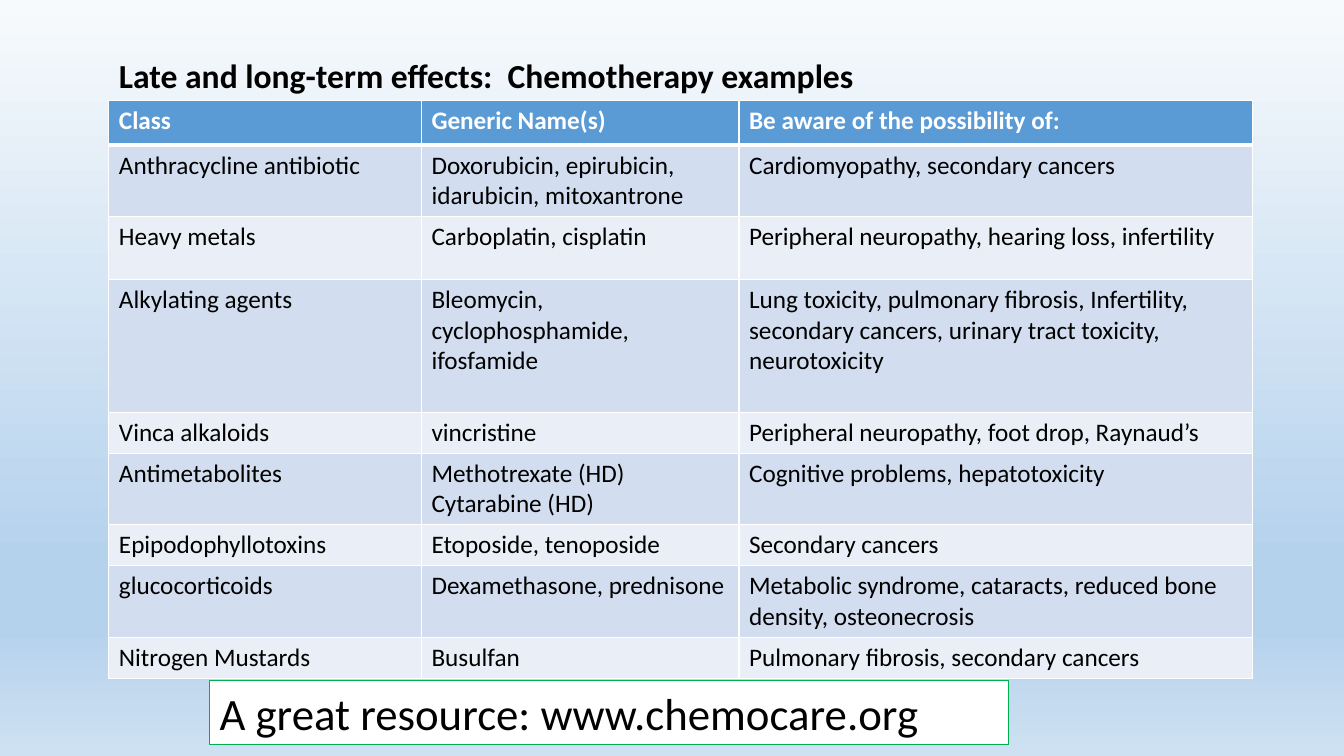
from lxml.etree import SubElement
from pptx import Presentation
from pptx.dml.color import RGBColor
from pptx.enum.shapes import MSO_SHAPE
from pptx.enum.text import MSO_ANCHOR, PP_ALIGN
from pptx.oxml.ns import qn
from pptx.util import Inches, Pt

COLORS = {
    "text": "000000",
    "white": "FFFFFF",
    "header": "5B9BD5",
    "odd_row": "D2DEEF",
    "even_row": "EAEFF7",
    "resource_line": "00B050",
}
# Background stops: percent down the slide, colour
SKY_STOPS = [(0, "F7FAFD"), (74, "B5D2EC"), (83, "B5D2EC"), (100, "CEE1F2")]

COLUMN_WIDTHS = [3.1, 3.15, 5.09]
ROW_HEIGHTS = [0.44, 0.62, 0.62, 1.32, 0.36, 0.62, 0.36, 0.62, 0.36]
DRUG_EFFECTS = [
    ("Class", "Generic Name(s)", "Be aware of the possibility of:"),
    ("Anthracycline antibiotic", "Doxorubicin, epirubicin, idarubicin, mitoxantrone",
     "Cardiomyopathy, secondary cancers"),
    ("Heavy metals", "Carboplatin, cisplatin",
     "Peripheral neuropathy, hearing loss, infertility"),
    ("Alkylating agents", "Bleomycin, cyclophosphamide, ifosfamide",
     "Lung toxicity, pulmonary fibrosis, Infertility, secondary cancers, "
     "urinary tract toxicity, neurotoxicity"),
    ("Vinca alkaloids", "vincristine", "Peripheral neuropathy, foot drop, Raynaud’s"),
    ("Antimetabolites", "Methotrexate (HD)\nCytarabine (HD)",
     "Cognitive problems, hepatotoxicity"),
    ("Epipodophyllotoxins", "Etoposide, tenoposide", "Secondary cancers"),
    ("glucocorticoids", "Dexamethasone, prednisone",
     "Metabolic syndrome, cataracts, reduced bone density, osteonecrosis"),
    ("Nitrogen Mustards", "Busulfan", "Pulmonary fibrosis, secondary cancers"),
]


def color(name):
    return RGBColor.from_string(COLORS[name])


def write(frame, text, size, color_name="text", bold=False):
    frame.text = text
    for paragraph in frame.paragraphs:
        paragraph.alignment = PP_ALIGN.LEFT
        font = paragraph.font
        font.name, font.size, font.bold = "Calibri", Pt(size), bold
        font.color.rgb = color(color_name)


def paint_background(slide):
    fill = slide.background.fill
    fill.gradient()
    fill.gradient_angle = 270
    stops = slide.element.find(".//" + qn("a:gsLst"))
    for stop in list(stops):
        stops.remove(stop)
    for percent, rgb in SKY_STOPS:
        stop = SubElement(stops, qn("a:gs"), pos=str(percent * 1000))
        SubElement(stop, qn("a:srgbClr"), val=rgb)


def add_title(slide, text):
    title = slide.shapes.title
    title.left, title.top = Inches(1.08), Inches(0.4)
    title.width, title.height = Inches(11.33), Inches(0.68)
    title.text_frame.vertical_anchor = MSO_ANCHOR.MIDDLE
    write(title.text_frame, text, 24, bold=True)


def set_borders(cell, widths):
    properties = cell._tc.get_or_add_tcPr()
    for side, width in widths.items():
        line = SubElement(properties, qn("a:ln" + side), w=str(Pt(width)))
        fill = SubElement(line, qn("a:solidFill"))
        SubElement(fill, qn("a:srgbClr"), val=COLORS["white"])


def add_effects_table(slide):
    effects = slide.shapes.add_table(
        len(DRUG_EFFECTS), len(COLUMN_WIDTHS), Inches(1.08), Inches(1),
        Inches(sum(COLUMN_WIDTHS)), Inches(sum(ROW_HEIGHTS))).table
    for column, width in zip(effects.columns, COLUMN_WIDTHS):
        column.width = Inches(width)
    for index, (row, height) in enumerate(zip(effects.rows, ROW_HEIGHTS)):
        row.height = Inches(height)
        is_header = index == 0
        band = "header" if is_header else "odd_row" if index % 2 else "even_row"
        for cell, text in zip(row.cells, DRUG_EFFECTS[index]):
            write(cell.text_frame, text, 18, "white" if is_header else "text", is_header)
            # The heavy rule under the header is shared with the first drug row
            set_borders(cell, {"L": 1, "R": 1, "T": 3 if index == 1 else 1,
                               "B": 3 if is_header else 1})
            cell.fill.solid()
            cell.fill.fore_color.rgb = color(band)


def add_resource_box(slide, text):
    resource = slide.shapes.add_shape(
        MSO_SHAPE.RECTANGLE, Inches(2.08), Inches(6.75), Inches(7.92), Inches(0.64))
    resource.shadow.inherit = False
    resource.fill.solid()
    resource.fill.fore_color.rgb = color("white")
    resource.line.color.rgb = color("resource_line")
    resource.line.width = Pt(0.75)
    resource.text_frame.word_wrap = True
    resource.text_frame.vertical_anchor = MSO_ANCHOR.TOP
    write(resource.text_frame, text, 32)


def main():
    deck = Presentation()
    deck.slide_width, deck.slide_height = Inches(13.33), Inches(7.5)
    slide = deck.slides.add_slide(deck.slide_layouts[5])
    paint_background(slide)
    add_title(slide, "Late and long-term effects:  Chemotherapy examples")
    add_effects_table(slide)
    add_resource_box(slide, "A great resource: www.chemocare.org")
    deck.save("out.pptx")


if __name__ == "__main__":
    main()
